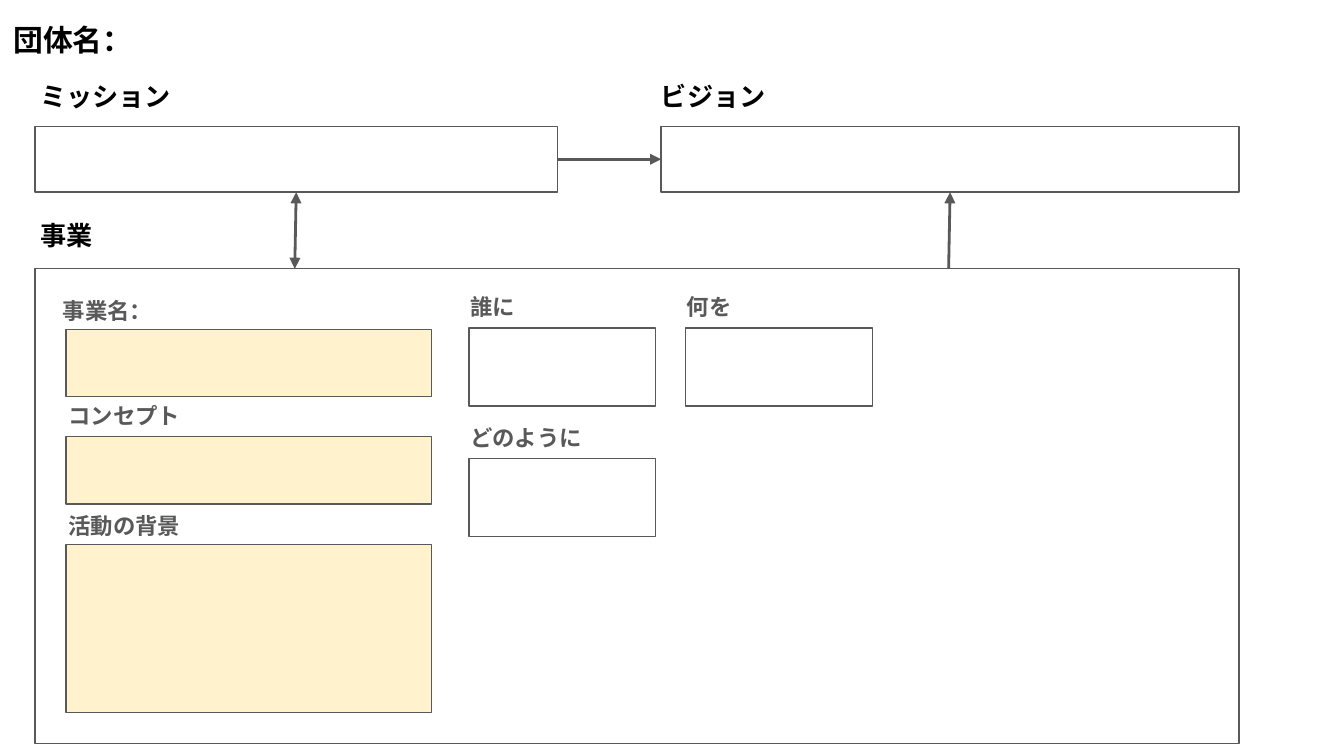
from lxml.etree import SubElement
from pptx import Presentation
from pptx.dml.color import RGBColor
from pptx.enum.shapes import MSO_CONNECTOR, MSO_SHAPE
from pptx.enum.text import MSO_ANCHOR, MSO_AUTO_SIZE, PP_ALIGN
from pptx.oxml.ns import qn
from pptx.util import Pt

THEME = {
    "font": "Arial",
    "black": RGBColor(0x00, 0x00, 0x00),
    "gray": RGBColor(0x59, 0x59, 0x59),
    "white": RGBColor(0xFF, 0xFF, 0xFF),
    "cream": RGBColor(0xFF, 0xF2, 0xCC),
    "title": 16,
    "heading": 14,
    "label": 12,
    "outline": 0.75,
    "arrow": 1.5,
    "inset": 7.2,
}

TITLE = "団体名："
HEADINGS = [
    ("ミッション", 14.4, 36),
    ("ビジョン", 347, 36),
    ("事業", 14.4, 110.2),
]
HEADING_SIZE = (270, 31.7)
FRAMES = {
    "mission": (18.7, 67.7, 280, 35.3),
    "vision": (354.2, 67.7, 309.6, 35.3),
    "business": (18.7, 144, 645.1, 254.2),
}

PROFILE_LEFT, PROFILE_WIDTH = 35.3, 195.8
PROFILE_FIELDS = [
    ("事業名：", 26.6, 151.9, 176.4, 36),
    ("コンセプト", 29.5, 208.1, 234, 36),
    ("活動の背景", 29.5, 267.1, 291.6, 90),
]

APPROACH_LEFT, APPROACH_TOP = 251.3, 175.7
APPROACH_SIZE = (100, 41.8)
APPROACH_STEP = (116, 70)
APPROACH_FIELDS = [("誰に", 0, 0), ("何を", 1, 0), ("どのように", 0, 1)]
APPROACH_LABEL_OFFSET = (-6.5, -25.9)
LABEL_SIZE = (137.5, 28.8)


def write_text(shape, text, size, color):
    frame = shape.text_frame
    frame.word_wrap = True
    frame.vertical_anchor = MSO_ANCHOR.TOP
    frame.margin_left = frame.margin_right = Pt(THEME["inset"])
    frame.margin_top = frame.margin_bottom = Pt(THEME["inset"])
    frame.text = text
    paragraph = frame.paragraphs[0]
    paragraph.alignment = PP_ALIGN.LEFT
    font = paragraph.font
    font.name = THEME["font"]
    font.size = Pt(THEME[size])
    font.bold = True
    font.color.rgb = THEME[color]
    return paragraph


def add_title(slide):
    title = slide.shapes.title
    title.left, title.top, title.width, title.height = Pt(0), Pt(1.4), Pt(671), Pt(35.3)
    write_text(title, TITLE, "title", "black").line_spacing = 1.15
    title.text_frame.auto_size = MSO_AUTO_SIZE.NONE


def add_label(slide, text, left, top, box_size, size, color):
    box = slide.shapes.add_textbox(Pt(left), Pt(top), *map(Pt, box_size))
    write_text(box, text, size, color)


def add_box(slide, left, top, width, height, fill=None):
    box = slide.shapes.add_shape(MSO_SHAPE.RECTANGLE, *map(Pt, (left, top, width, height)))
    box.shadow.inherit = False
    if fill:
        box.fill.solid()
        box.fill.fore_color.rgb = THEME[fill]
    else:
        box.fill.background()
    box.line.color.rgb = THEME["gray"]
    box.line.width = Pt(THEME["outline"])
    return box


def add_arrow(slide, start, end, ends):
    connector = slide.shapes.add_connector(MSO_CONNECTOR.STRAIGHT, *map(Pt, start + end))
    connector.line.color.rgb = THEME["gray"]
    connector.line.width = Pt(THEME["arrow"])
    line = connector.line._get_or_add_ln()
    for name in ends:
        SubElement(line, qn(f"a:{name}"), type="triangle")
    SubElement(connector._element.spPr, qn("a:effectLst"))
    return connector


def add_arrows(slide, boxes):
    mission_left, top, mission_width, height = FRAMES["mission"]
    vision_left, _, vision_width, _ = FRAMES["vision"]
    business_top = FRAMES["business"][1]
    middle, bottom = top + height / 2, top + height

    forward = add_arrow(slide, (mission_left + mission_width, middle),
                        (vision_left, middle), ["tailEnd"])
    forward.begin_connect(boxes["mission"], 3)
    forward.end_connect(boxes["vision"], 1)

    for name, left, width, ends in (
        ("mission", mission_left, mission_width, ["headEnd", "tailEnd"]),
        ("vision", vision_left, vision_width, ["headEnd"]),
    ):
        center = left + width / 2
        arrow = add_arrow(slide, (center, bottom), (center - 0.8, business_top), ends)
        arrow.begin_connect(boxes[name], 2)


def main():
    presentation = Presentation()
    presentation.slide_width, presentation.slide_height = Pt(720), Pt(405)
    slide = presentation.slides.add_slide(presentation.slide_layouts[5])

    add_title(slide)
    for text, left, top in HEADINGS:
        add_label(slide, text, left, top, HEADING_SIZE, "heading", "black")
    boxes = {name: add_box(slide, *bounds) for name, bounds in FRAMES.items()}
    add_arrows(slide, boxes)

    for text, label_left, label_top, top, height in PROFILE_FIELDS:
        add_box(slide, PROFILE_LEFT, top, PROFILE_WIDTH, height, "cream")
        add_label(slide, text, label_left, label_top, LABEL_SIZE, "label", "gray")

    for text, column, row in APPROACH_FIELDS:
        left = APPROACH_LEFT + column * APPROACH_STEP[0]
        top = APPROACH_TOP + row * APPROACH_STEP[1]
        add_box(slide, left, top, *APPROACH_SIZE, "white")
        add_label(slide, text, left + APPROACH_LABEL_OFFSET[0],
                  top + APPROACH_LABEL_OFFSET[1], LABEL_SIZE, "label", "gray")

    presentation.save("out.pptx")


if __name__ == "__main__":
    main()
